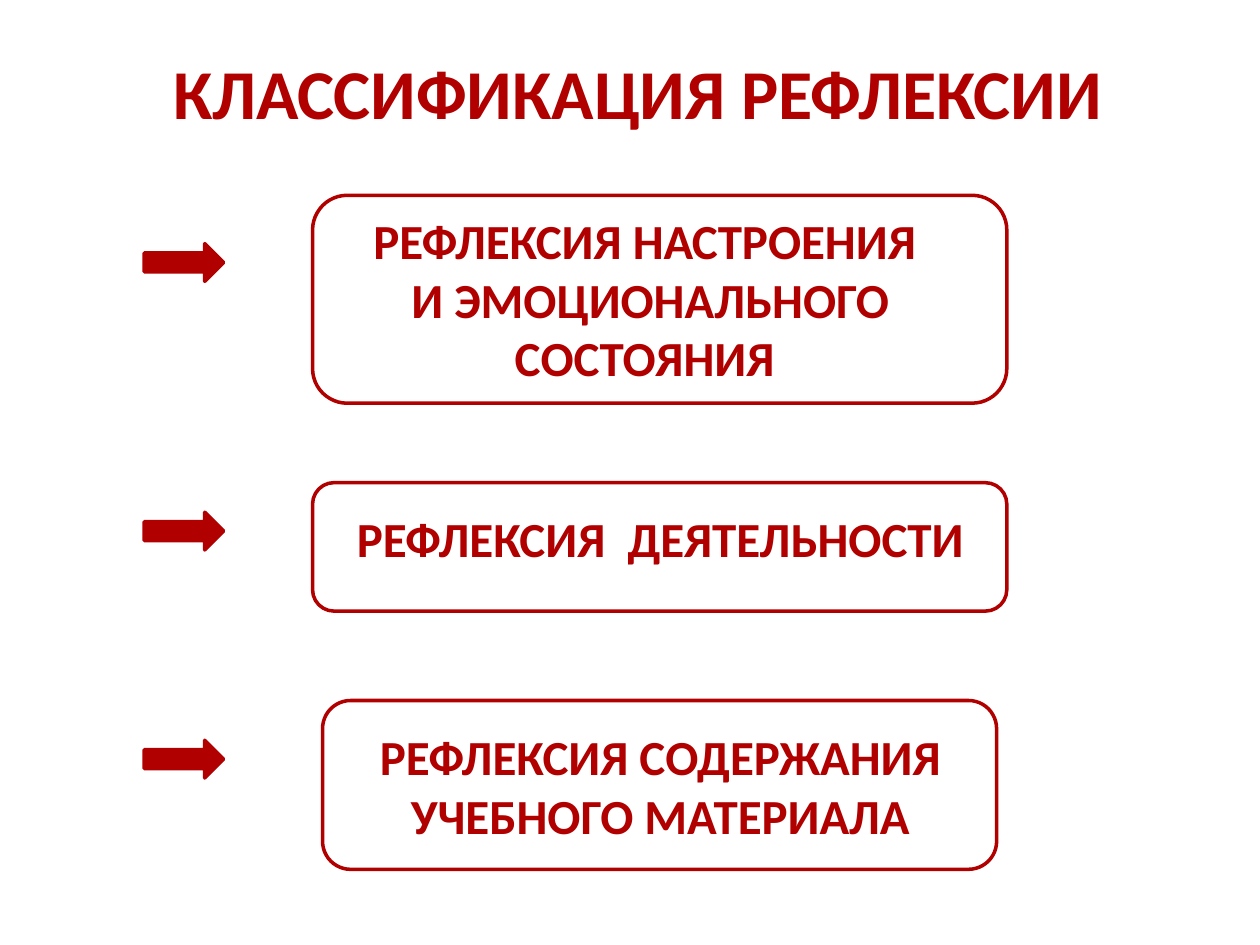
import pptx
import pptx.util
import pptx.dml.color
import pptx.enum.shapes
import pptx.enum.text

Pt = pptx.util.Pt
SHAPES = pptx.enum.shapes.MSO_SHAPE
COLORS = {"accent": "B00000"}
FONT = "Calibri"
ARROW_LEFT, ARROW_WIDTH, ARROW_HEIGHT = 82.4, 45.4, 21.6

KINDS = [
    (139.2, (178.6, 111.6, 396.7, 118.8), (201.6, 116.6, 339.8, 108.7),
     ["РЕФЛЕКСИЯ НАСТРОЕНИЯ ", "И ЭМОЦИОНАЛЬНОГО СОСТОЯНИЯ "]),
    (292.7, (178.6, 275.8, 396.7, 73.4), (190.1, 287.3, 374.4, 41),
     ["РЕФЛЕКСИЯ  ДЕЯТЕЛЬНОСТИ"]),
    (423, (184.3, 400.3, 385.2, 96.5), (201.6, 411.8, 351.4, 74.9),
     ["РЕФЛЕКСИЯ СОДЕРЖАНИЯ УЧЕБНОГО МАТЕРИАЛА"]),
]


def accent():
    return pptx.dml.color.RGBColor.from_string(COLORS["accent"])


def add_outlined(slide, preset, place, filled):
    outline = slide.shapes.add_shape(preset, *map(Pt, place))
    outline.shadow.inherit = False
    if filled:
        outline.fill.solid()
        outline.fill.fore_color.rgb = accent()
    else:
        outline.fill.background()
    outline.line.color.rgb = accent()
    outline.line.width = Pt(2)


def add_text(slide, place, lines, size):
    frame = slide.shapes.add_textbox(*map(Pt, place)).text_frame
    frame.word_wrap = True
    frame.vertical_anchor = pptx.enum.text.MSO_ANCHOR.TOP
    frame.text = "\n".join(lines)
    for paragraph in frame.paragraphs:
        paragraph.alignment = pptx.enum.text.PP_ALIGN.CENTER
        paragraph.font.name = FONT
        paragraph.font.size = Pt(size)
        paragraph.font.bold = True
        paragraph.font.color.rgb = accent()


def add_kind(slide, arrow_top, frame_place, text_place, lines):
    arrow_place = (ARROW_LEFT, arrow_top, ARROW_WIDTH, ARROW_HEIGHT)
    add_outlined(slide, SHAPES.RIGHT_ARROW, arrow_place, True)
    add_outlined(slide, SHAPES.FLOWCHART_ALTERNATE_PROCESS, frame_place, False)
    add_text(slide, text_place, lines, 28)


def main():
    deck = pptx.Presentation()
    deck.slide_width, deck.slide_height = Pt(720), Pt(540)
    slide = deck.slides.add_slide(deck.slide_layouts[6])
    add_text(slide, (38.5, 25, 652, 56), ["КЛАССИФИКАЦИЯ РЕФЛЕКСИИ"], 40)
    for kind in KINDS:
        add_kind(slide, *kind)
    deck.save("out.pptx")


if __name__ == "__main__":
    main()
